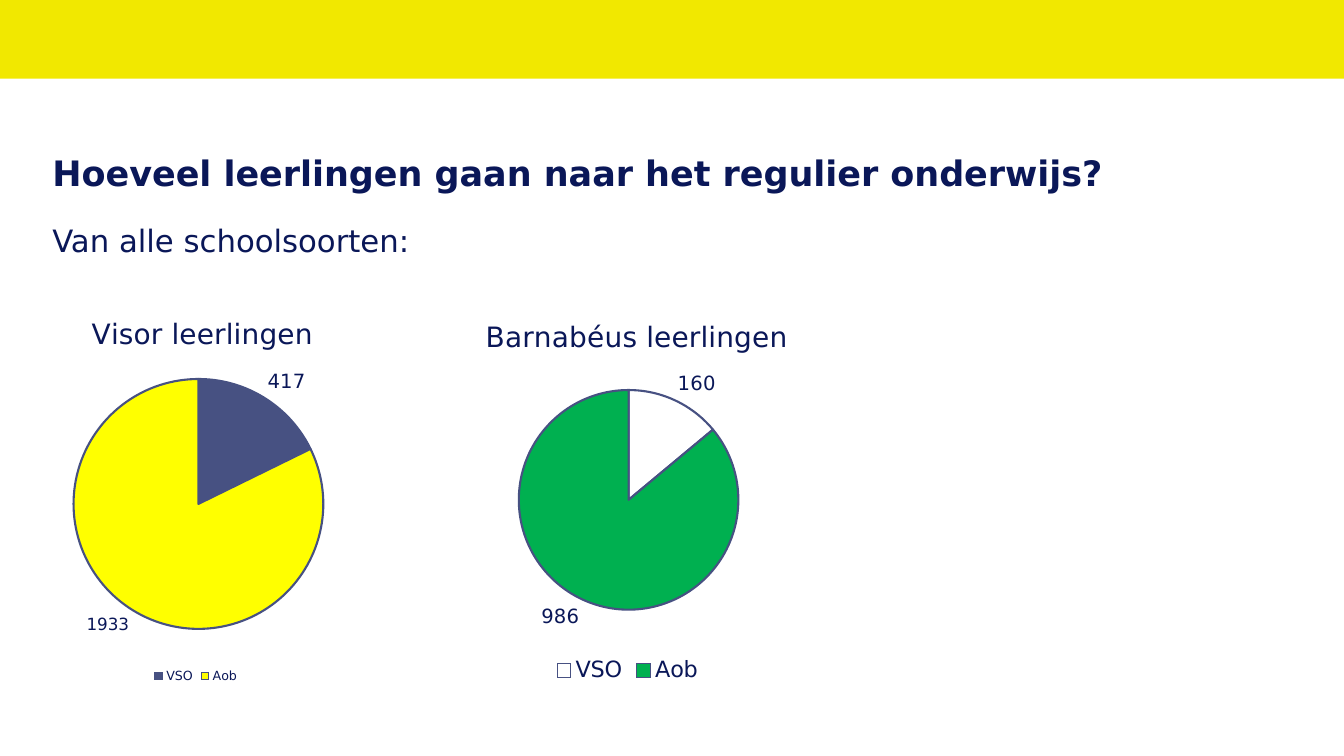
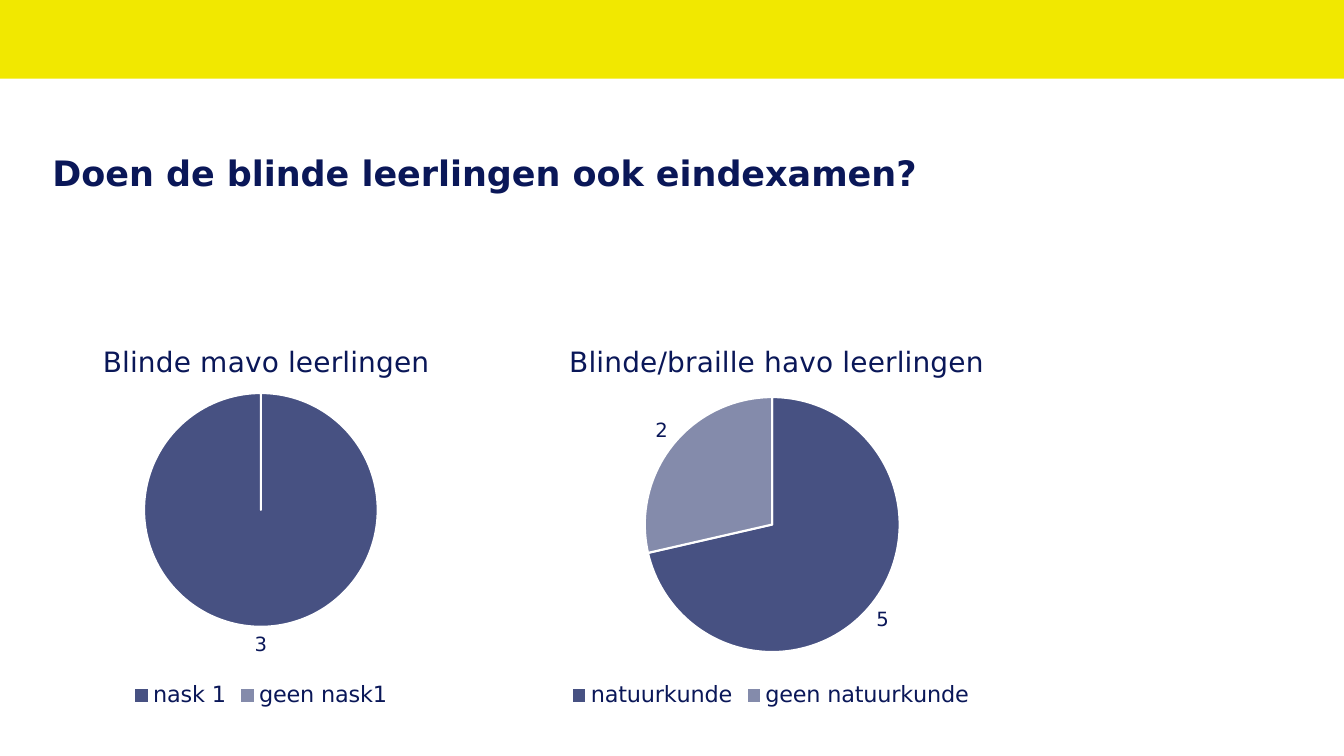
from lxml.etree import SubElement
from pptx import Presentation
from pptx.chart.data import CategoryChartData
from pptx.dml.color import RGBColor
from pptx.enum.chart import XL_CHART_TYPE as ChartType
from pptx.enum.chart import XL_LABEL_POSITION as LabelPos
from pptx.enum.chart import XL_LEGEND_POSITION as LegendPos
from pptx.enum.shapes import MSO_SHAPE as Preset
from pptx.enum.text import MSO_ANCHOR as Anchor
from pptx.enum.text import MSO_AUTO_SIZE as AutoSize
from pptx.enum.text import PP_ALIGN as Align
from pptx.oxml import parse_xml
from pptx.oxml.ns import nsdecls, qn
from pptx.util import Pt

PX = 9144  # EMU in one px, 100 px to the inch
SLIDE_W, SLIDE_H, BAND_H = 1334, 750, 78
FONT = "DejaVu Sans"
COLORS = {
    "navy": "0A1758", "band": "F1E800", "white": "FFFFFF", "slate": "475182",
    "haze": "848BAB", "yellow": "FFFF00", "green": "00B050",
}
TITLE_BOX = (52, 150, 1228, 60)
INTRO_BOX = (52, 215, 1221, 60)

# Content: box is left, top, width, height; pie is left, top, diameter
SLIDES = [
    {
        "title": "Hoeveel leerlingen gaan naar het regulier onderwijs?",
        "intro": "Van alle schoolsoorten:",
        "charts": [
            {"title": "Barnabéus leerlingen", "title_at": (477, 310),
             "box": (363, 288, 520, 394), "pie": (515, 387, 218),
             "values": {"VSO": 160, "Aob": 986}, "fills": ("white", "green"),
             "outline": "slate", "area": "white", "legend_size": 16},
            {"title": "Visor leerlingen", "title_at": (86, 307),
             "box": (28, 288, 333, 394), "pie": (73, 376, 248),
             "values": {"VSO": 417, "Aob": 1933}, "fills": ("slate", "yellow"),
             "outline": "slate", "area": "white", "legend_size": 9,
             "label_sizes": {1: 12}},
        ],
    },
    {
        "title": "Doen de blinde leerlingen ook eindexamen?",
        "charts": [
            {"title": "Blinde mavo leerlingen", "title_at": (97, 335),
             "box": (9, 313, 500, 394), "pie": (143, 390, 232),
             "values": {"nask 1": 3, "geen nask1": 0}, "fills": ("slate", "haze"),
             "outline": "white", "area": None, "legend_size": 16},
            {"title": "Blinde/braille havo leerlingen", "title_at": (560, 335),
             "box": (438, 313, 654, 394), "pie": (640, 394, 253),
             "values": {"natuurkunde": 5, "geen natuurkunde": 2},
             "fills": ("slate", "haze"),
             "outline": "white", "area": "white", "legend_size": 16},
        ],
    },
]


def rgb(color):
    return RGBColor.from_string(COLORS[color])


def emu(*lengths):
    return [length * PX for length in lengths]


def style_font(font, size, bold=False):
    for key, value in {"name": FONT, "size": Pt(size), "bold": bold}.items():
        setattr(font, key, value)
    font.color.rgb = rgb("navy")


def write_line(shape, text, box, size, bold=False):
    for key, value in zip(("left", "top", "width", "height"), emu(*box)):
        setattr(shape, key, value)
    frame = shape.text_frame
    frame_format = {
        "margin_left": 0, "margin_top": 0, "margin_right": 0, "margin_bottom": 0,
        "word_wrap": True, "auto_size": AutoSize.NONE, "vertical_anchor": Anchor.TOP,
    }
    for key, value in frame_format.items():
        setattr(frame, key, value)
    frame.text = text
    line = frame.paragraphs[0]
    line.alignment = Align.LEFT
    line.line_spacing = Pt(30)
    style_font(line.runs[0].font, size, bold)


def set_layout(part, index, settings):
    """Give a chart part a manual layout as its child number index."""
    for old in part.findall(qn("c:layout")):
        part.remove(old)
    layout = parse_xml(f"<c:layout {nsdecls('c')}><c:manualLayout/></c:layout>")
    for tag, value in settings.items():
        SubElement(layout[0], qn(f"c:{tag}")).set("val", str(value))
    part.insert(index, layout)


def fill_area(chart, color):
    fill = (f'<a:solidFill><a:srgbClr val="{COLORS[color]}"/></a:solidFill>'
            if color else "<a:noFill/>")
    area = parse_xml(f"<c:spPr {nsdecls('c', 'a')}>{fill}"
                     "<a:ln><a:noFill/></a:ln></c:spPr>")
    chart._chartSpace.find(qn("c:txPr")).addprevious(area)


def add_pie(slide, pie):
    data = CategoryChartData()
    data.categories = list(pie["values"])
    data.add_series("Series 1", list(pie["values"].values()))
    chart = slide.shapes.add_chart(ChartType.PIE, *emu(*pie["box"]), data).chart
    style_font(chart.font, 10)
    fill_area(chart, pie["area"])

    # Title and plot, placed as fractions of the chart box
    left, top, width, height = pie["box"]

    def fraction(x, y):
        return {"xMode": "edge", "yMode": "edge",
                "x": round((x - left) / width, 4), "y": round((y - top) / height, 4)}

    chart.has_title = True
    heading = chart.chart_title.text_frame
    heading.text = pie["title"]
    style_font(heading.paragraphs[0].runs[0].font, 20)
    set_layout(chart.chart_title._element, 1, fraction(*pie["title_at"]))
    x, y, diameter = pie["pie"]
    size = {"w": round(diameter / width, 4), "h": round(diameter / height, 4)}
    plot_area = chart._chartSpace.chart.plotArea
    set_layout(plot_area, 0, {"layoutTarget": "inner", **fraction(x, y), **size})

    # Legend
    chart.has_legend = True
    chart.legend.position = LegendPos.BOTTOM
    chart.legend.include_in_layout = False
    style_font(chart.legend.font, pie["legend_size"])

    # Slices and value labels
    series = chart.plots[0].series[0]
    for index, color in enumerate(pie["fills"]):
        slice_format = series.points[index].format
        slice_format.fill.solid()
        slice_format.fill.fore_color.rgb = rgb(color)
        slice_format.line.color.rgb = rgb(pie["outline"])
        slice_format.line.width = Pt(1.5)
    labels = series.data_labels
    label_format = {
        "show_value": True, "position": LabelPos.OUTSIDE_END,
        "number_format": "0;;;", "number_format_is_linked": False,
    }
    for key, value in label_format.items():
        setattr(labels, key, value)
    style_font(labels.font, 14)
    for index, label_size in pie.get("label_sizes", {}).items():
        label = series.points[index].data_label
        style_font(label.font, label_size)
        label.position = LabelPos.OUTSIDE_END


def add_band(slide, layout):
    """Draw the top band and move it to the layout that all slides share."""
    band = slide.shapes.add_shape(Preset.RECTANGLE, *emu(0, 0, SLIDE_W, BAND_H))
    band.shadow.inherit = False
    band.fill.solid()
    band.fill.fore_color.rgb = rgb("band")
    band.line.fill.background()
    layout.shapes._spTree.insert(2, band._element)


def main():
    deck = Presentation()
    deck.slide_width, deck.slide_height = emu(SLIDE_W, SLIDE_H)
    title_only = deck.slide_layouts[5]
    for number, content in enumerate(SLIDES):
        slide = deck.slides.add_slide(title_only)
        if number == 0:
            add_band(slide, title_only)
        write_line(slide.shapes.title, content["title"], TITLE_BOX, 25, bold=True)
        if "intro" in content:
            intro = slide.shapes.add_textbox(*emu(*INTRO_BOX))
            write_line(intro, content["intro"], INTRO_BOX, 22)
        for pie in content["charts"]:
            add_pie(slide, pie)
    deck.save("out.pptx")


if __name__ == "__main__":
    main()
